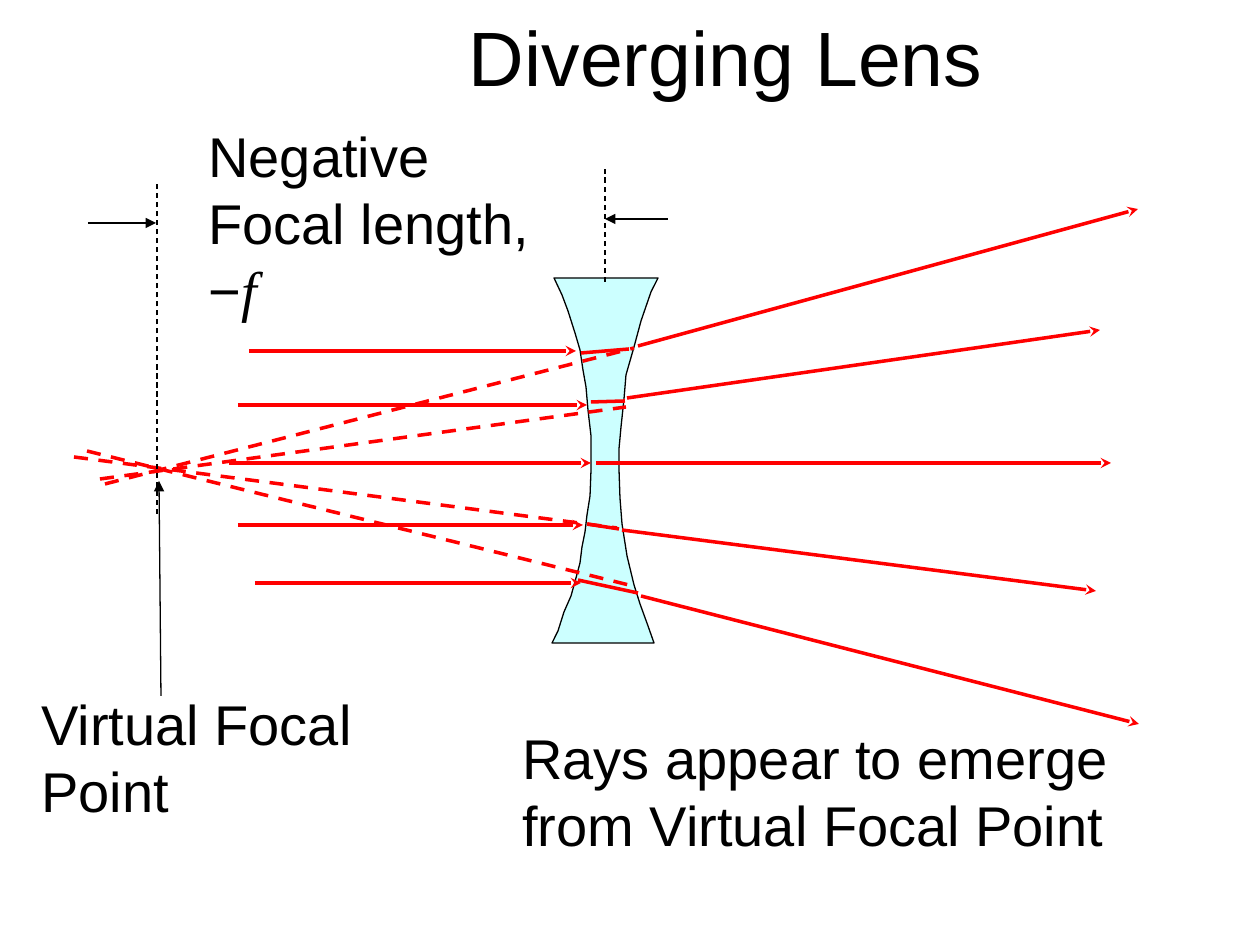
from lxml.etree import SubElement
from pptx import Presentation
from pptx.dml.color import RGBColor
from pptx.enum.dml import MSO_LINE
from pptx.enum.shapes import MSO_CONNECTOR
from pptx.enum.text import MSO_ANCHOR, PP_ALIGN
from pptx.oxml.ns import qn
from pptx.util import Emu, Pt

PX = 914400 / 126
BLACK, RED, GLASS = "000000", "FF0000", "CCFFFF"

LENS = [
    (552, 643), (654, 643), (648, 626), (640, 604), (634, 585), (627, 556),
    (622, 524), (620, 498), (619, 469), (619, 449), (621, 427), (624, 399),
    (626, 375), (634, 347), (641, 321), (651, 292), (658, 278), (554, 278),
    (562, 295), (568, 311), (575, 333), (580, 350), (583, 370), (586, 387),
    (588, 410), (591, 436), (591, 470), (590, 496), (587, 515), (585, 532),
    (582, 547), (580, 563), (576, 578), (571, 596), (564, 612), (558, 631),
]
INCOMING_RAYS = [
    (249, 351, 576, 351), (238, 405, 587, 405), (229, 463, 591, 463),
    (238, 525, 583, 525), (255, 583, 581, 583),
]
RAYS_IN_LENS = [
    (581, 353, 629, 349), (591, 402, 625, 401),
    (587, 524, 619, 529), (578, 580, 638, 593),
]
OUTGOING_RAYS = [
    (638, 346, 1138, 209), (627, 398, 1100, 330), (596, 463, 1111, 463),
    (622, 530, 1096, 591), (641, 596, 1139, 724),
]
VIRTUAL_RAYS = [
    (105, 484, 634, 348), (100, 479, 626, 407),
    (74, 457, 617, 528), (87, 451, 633, 586),
]
FOCAL_LIMITS = [(157, 514, 157, 180), (605, 282, 605, 169)]
POINTERS = [(161, 696, 159, 481), (88, 223, 156, 223), (668, 219, 605, 219)]


def px(value):
    return Emu(round(value * PX))


def color(value):
    return RGBColor.from_string(value)


class Drawing:
    font = "Arial"
    text_size = 32
    thin, thick = 0.75, 2

    def __init__(self, slide):
        self.slide = slide

    def outline(self, points, fill):
        builder = self.slide.shapes.build_freeform(*points[0], scale=PX)
        builder.add_line_segments(points[1:], close=True)
        shape = builder.convert_to_shape()
        shape.shadow.inherit = False
        shape.fill.solid()
        shape.fill.fore_color.rgb = color(fill)
        shape.line.color.rgb = color(BLACK)
        shape.line.width = Pt(self.thin)

    def line(self, ends, stroke, width, dashed=False, arrow=None):
        connector = self.slide.shapes.add_connector(
            MSO_CONNECTOR.STRAIGHT, *map(px, ends))
        connector.line.color.rgb = color(stroke)
        connector.line.width = Pt(width)
        if dashed:
            connector.line.dash_style = MSO_LINE.DASH
        properties = connector._element.spPr
        if arrow:
            SubElement(properties.find(qn("a:ln")), qn("a:tailEnd"), type=arrow)
        SubElement(properties, qn("a:effectLst"))

    def ray(self, ends, **options):
        self.line(ends, RED, self.thick, **options)

    def guide(self, ends, **options):
        self.line(ends, BLACK, self.thin, **options)

    def text(self, box, words, size=text_size, align=PP_ALIGN.LEFT,
             anchor=MSO_ANCHOR.TOP, symbol=None):
        frame = self.slide.shapes.add_textbox(*map(px, box)).text_frame
        frame.word_wrap = True
        frame.vertical_anchor = anchor
        paragraph = frame.paragraphs[0]
        paragraph.alignment = align
        self.run(paragraph, words, size, self.font)
        if symbol:
            self.run(paragraph, symbol, size, "Times New Roman", italic=True)

    def run(self, paragraph, words, size, font, italic=False):
        run = paragraph.add_run()
        run.text = words
        run.font.name = font
        run.font.size = Pt(size)
        run.font.italic = italic
        run.font.color.rgb = color(BLACK)


def main():
    presentation = Presentation()
    presentation.slide_width, presentation.slide_height = px(1260), px(945)
    slide = presentation.slides.add_slide(presentation.slide_layouts[6])
    drawing = Drawing(slide)

    drawing.outline(LENS, GLASS)
    drawing.text((336, 0, 780, 111), "Diverging Lens", size=44,
                 align=PP_ALIGN.CENTER, anchor=MSO_ANCHOR.MIDDLE)

    for ends in INCOMING_RAYS + OUTGOING_RAYS:
        drawing.ray(ends, arrow="stealth")
    for ends in RAYS_IN_LENS:
        drawing.ray(ends)
    for ends in VIRTUAL_RAYS:
        drawing.ray(ends, dashed=True)
    for ends in FOCAL_LIMITS:
        drawing.guide(ends, dashed=True)
    for ends in POINTERS:
        drawing.guide(ends, arrow="triangle")

    drawing.text((29, 683, 355, 147), "Virtual Focal Point")
    drawing.text((196, 115, 390, 149), "Negative Focal length, −", symbol="f")
    drawing.text((510, 717, 690, 147),
                 "Rays appear to emerge from Virtual Focal Point")

    presentation.save("out.pptx")


if __name__ == "__main__":
    main()
